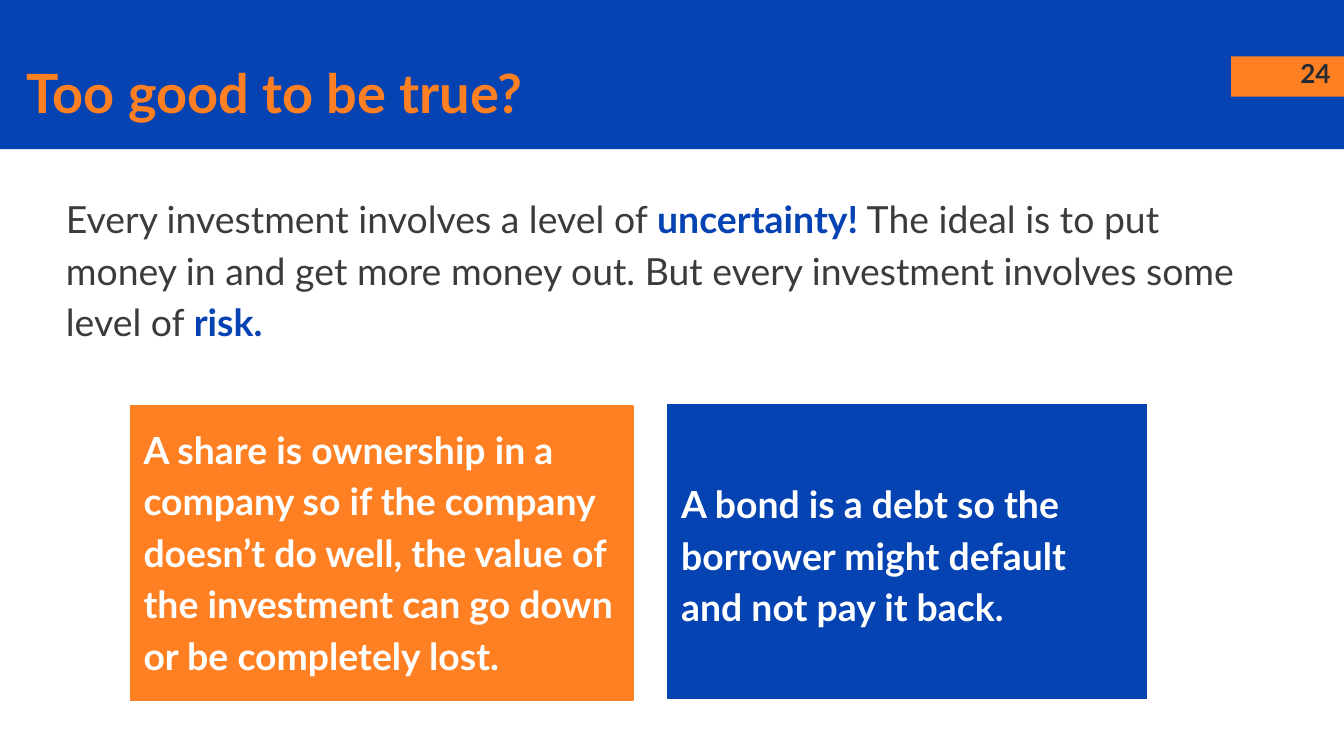
from lxml import etree
from pptx import Presentation
from pptx.dml.color import RGBColor
from pptx.enum.shapes import MSO_SHAPE
from pptx.enum.text import MSO_ANCHOR, MSO_AUTO_SIZE, PP_ALIGN
from pptx.oxml.ns import qn
from pptx.util import Inches, Pt

RECTANGLE = MSO_SHAPE.RECTANGLE
TOP, MIDDLE = MSO_ANCHOR.TOP, MSO_ANCHOR.MIDDLE
LEFT, RIGHT = PP_ALIGN.LEFT, PP_ALIGN.RIGHT
NO_AUTOFIT = MSO_AUTO_SIZE.NONE

COLOURS = {
    "blue": "0543B3",
    "orange": "FF8022",
    "white": "FFFFFF",
    "body": "3B3B3B",
    "number": "262A33",
}


def set_all(target, values):
    for name, value in values.items():
        setattr(target, name, value)


def colour(name):
    return RGBColor.from_string(COLOURS[name])


def place(box, left, top, width, height):
    sides = {"left": left, "top": top, "width": width, "height": height}
    set_all(box, {name: Inches(value) for name, value in sides.items()})


def write(box, spans, size, anchor=TOP, align=LEFT, spacing=1.15):
    frame = box.text_frame
    margins = ("margin_left", "margin_top", "margin_right", "margin_bottom")
    set_all(frame, dict.fromkeys(margins, Inches(0.1)))
    set_all(frame, {"word_wrap": True, "auto_size": NO_AUTOFIT,
                    "vertical_anchor": anchor})
    para = frame.paragraphs[0]
    set_all(para, {"alignment": align, "line_spacing": spacing,
                   "space_before": Pt(0)})
    for text, colour_name, bold in spans:
        span = para.add_run()
        span.text = text
        set_all(span.font, {"name": "Lato", "size": Pt(size), "bold": bold})
        span.font.color.rgb = colour(colour_name)


def remove_bullet(para):
    properties = para._p.get_or_add_pPr()
    properties.set("marL", "0")
    properties.set("indent", "0")
    etree.SubElement(properties, qn("a:buNone"))


def add_panel(page, position, fill, outlined=False):
    panel = page.shapes.add_shape(RECTANGLE, *map(Inches, position))
    panel.shadow.inherit = False
    panel.fill.solid()
    panel.fill.fore_color.rgb = colour(fill)
    if outlined:
        panel.line.color.rgb = colour(fill)
        panel.line.width = Pt(0.75)
    else:
        panel.line.fill.background()
    return panel


def add_header(page):
    title = page.shapes.title
    band = add_panel(page, (0, 0, 10, 1.11), "blue")
    title.element.addprevious(band.element)
    place(title, 0.1, 0.27, 9.96, 0.69)
    write(title, [("Too good to be true?", "orange", True)], 29)
    add_panel(page, (9.16, 0.42, 0.84, 0.3), "orange")
    number = page.shapes.add_textbox(*map(Inches, (9.4, 0.33, 0.6, 0.43)))
    write(number, [("24", "number", True)], 14, align=RIGHT, spacing=1.0)


def add_introduction(page):
    body = page.placeholders[1]
    place(body, 0.39, 1.31, 8.9, 1.7)
    remove_bullet(body.text_frame.paragraphs[0])
    write(body, [
        ("Every investment involves a level of ", "body", False),
        ("uncertainty!", "blue", True),
        (" The ideal is to put money in and get more money out. "
         "But every investment involves some level of ", "body", False),
        ("risk.", "blue", True),
    ], 20)


def add_card(page, position, fill, text):
    card = add_panel(page, position, fill, outlined=True)
    write(card, [(text, "white", True)], 20, anchor=MIDDLE)
    return card


def main():
    deck = Presentation()
    set_all(deck, {"slide_width": Inches(10),
                   "slide_height": Inches(10 * 9 / 16)})
    page = deck.slides.add_slide(deck.slide_layouts[1])
    add_header(page)
    add_introduction(page)
    add_card(page, (4.97, 3.01, 3.56, 2.19), "blue",
             "A bond is a debt so the borrower might default "
             "and not pay it back.")
    share = add_card(page, (0.97, 3.02, 3.74, 2.19), "orange",
                     "A share is ownership in a company so if the company "
                     "doesn’t do well, the value of the investment can go "
                     "down or be completely lost.")
    share.text_frame.margin_bottom = Inches(0.16)
    deck.save("out.pptx")


if __name__ == "__main__":
    main()
